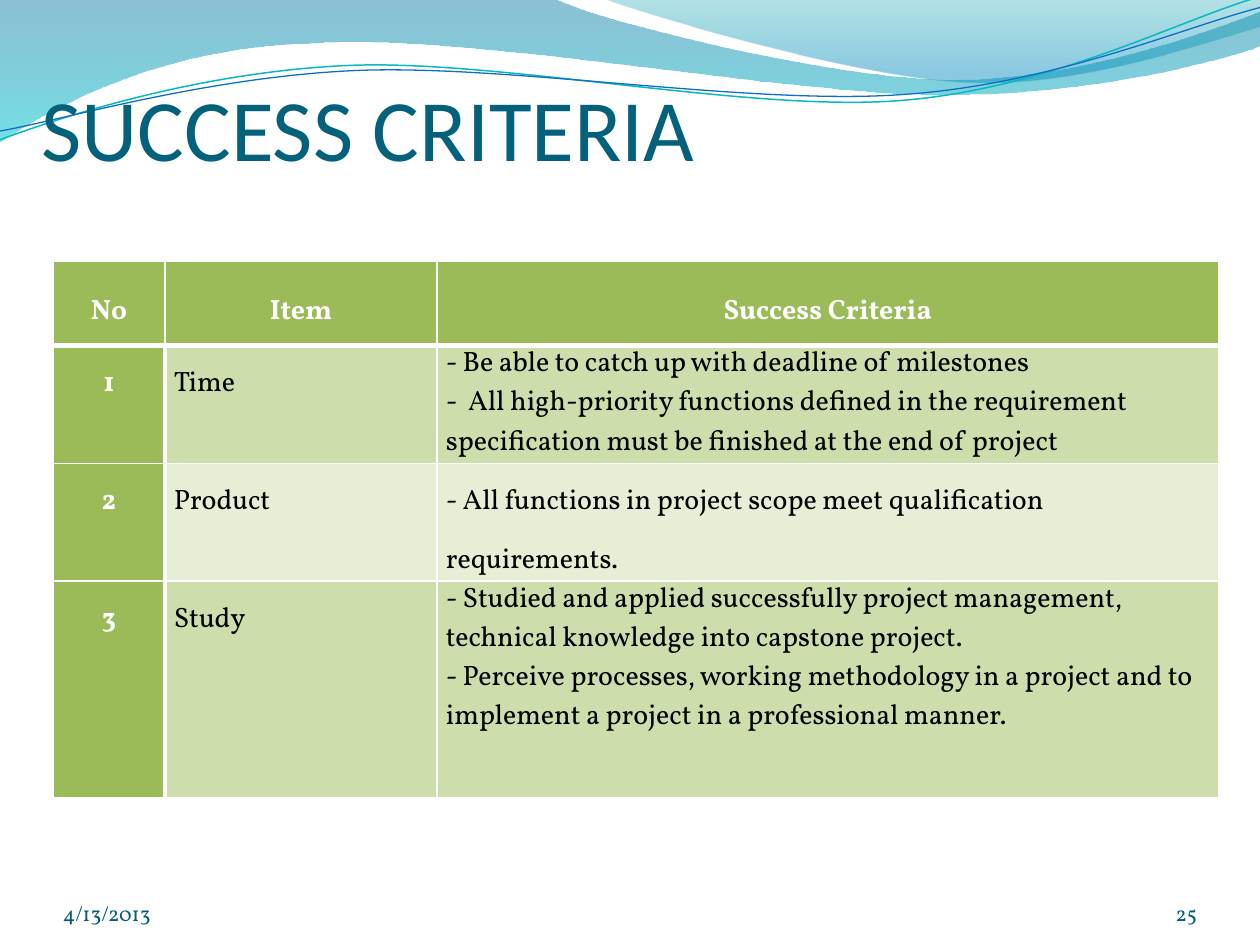
"""Build the success criteria slide: wave header, criteria table and footer."""
import pptx
import pptx.dml.color
import pptx.enum.text
import pptx.oxml
import pptx.oxml.ns
import pptx.util

PX = 9144
WHITE, BLACK, GREEN = "FFFFFF", "000000", "9BBB59"
BAND_FILLS = ("CDDDAC", "E6EED5")
ALIGN = pptx.enum.text.PP_ALIGN
ANCHOR = pptx.enum.text.MSO_ANCHOR

TITLE = "SUCCESS CRITERIA"
DATE, PAGE_NUMBER = "4/13/2013", "25"
HEADINGS = ("No", "Item", "Success Criteria")
CRITERIA = [
    ("Time", 1, [
        "- Be able to catch up with deadline of milestones",
        "-  All high-priority functions defined in the requirement specification "
        "must be finished at the end of project"]),
    ("Product", 1.5, [
        "- All functions in project scope meet qualification requirements."]),
    ("Study", 1, [
        "- Studied and applied successfully project management, "
        "technical knowledge into capstone project.",
        "- Perceive processes, working methodology in a project "
        "and to implement a project in a professional manner."]),
]
COLUMN_WIDTHS = (89, 216, 620)
ROW_HEIGHTS = (67, 94, 93, 172)

WAVE_FILLS = [
    ([(0, 0), (440, -1), (476, 17, 664, 63, 758, 63), (853, 63, 958, 26, 1000, 9),
      (1001, 36), (983, 44, 870, 76, 746, 75), (622, 75, 382, 28, 257, 34),
      (129, 36, 46, 83, -1, 113)],
     [(0, "0074A1", 45), (1, "00C6CF", 55)]),
    ([(479, -1), (509, 11, 682, 62, 769, 65), (856, 69, 961, 32, 1000, 21), (1000, 0)],
     [(0, "00A1A9", 30), (0.8, "008BBF", 45)]),
]
WAVE_LINES = [
    ([(0, 111), (48, 93, 158, 57, 277, 52), (395, 47, 593, 89, 713, 80),
      (833, 71, 938, 15, 998, -2)], "0AB8BF", 0.85),
    ([(0, 104), (47, 96, 164, 61, 283, 56), (403, 51, 597, 84, 717, 75),
      (836, 67, 941, 21, 1000, 6)], "0F6FC6", 0.75),
]


def rgb(hex_color):
    return pptx.dml.color.RGBColor.from_string(hex_color)


def write(frame, paragraphs, size=16, color=BLACK, font="Vollkorn", bold=False,
          align=ALIGN.LEFT, spacing=1):
    for index, text in enumerate(paragraphs):
        paragraph = frame.add_paragraph() if index else frame.paragraphs[0]
        paragraph.alignment = align
        paragraph.line_spacing = spacing
        run = paragraph.add_run()
        run.text = text
        run.font.size = pptx.util.Pt(size)
        run.font.name = font
        run.font.bold = bold
        run.font.color.rgb = rgb(color)


def add_label(slide, box, text, top_inset=0, **text_format):
    frame = slide.shapes.add_textbox(*(v * PX for v in box)).text_frame
    frame.word_wrap = True
    frame.vertical_anchor = ANCHOR.BOTTOM
    frame.margin_left = frame.margin_right = frame.margin_bottom = 0
    frame.margin_top = top_inset * PX
    write(frame, [text], **text_format)


def add_wave(slide, steps, closed):
    points = [step[i:i + 2] for step in steps for i in range(0, len(step), 2)]
    builder = slide.shapes.build_freeform(*points[0], scale=PX)
    builder.add_line_segments(points[1:], close=closed)
    wave = builder.convert_to_shape()
    wave.shadow.inherit = False
    segments = iter(list(wave.element.spPr.iter(pptx.oxml.ns.qn("a:lnTo"))))
    for step in steps[1:]:
        start = next(segments)
        if len(step) == 6:
            curve = pptx.oxml.parse_xml(f'<a:cubicBezTo {pptx.oxml.ns.nsdecls("a")}/>')
            start.addprevious(curve)
            for segment in (start, next(segments), next(segments)):
                curve.append(segment[0])
                segment.getparent().remove(segment)
    return wave


def fill_wave(wave, stops):
    wave.line.fill.background()
    wave.fill.gradient()
    wave.fill.gradient_angle = 270
    for stop, (position, color, _) in zip(wave.fill.gradient_stops, stops):
        stop.position = position
        stop.color.rgb = rgb(color)
    colors = wave.element.spPr.iter(pptx.oxml.ns.qn("a:srgbClr"))
    for color, (_, _, opacity) in zip(colors, stops):
        color.append(pptx.oxml.parse_xml(
            f'<a:alpha {pptx.oxml.ns.nsdecls("a")} val="{opacity * 1000}"/>'))


def border_cell(cell, widths):
    properties = cell._tc.get_or_add_tcPr()
    for index, (side, width) in enumerate(zip("LRTB", widths)):
        properties.insert(index, pptx.oxml.parse_xml(
            f'<a:ln{side} {pptx.oxml.ns.nsdecls("a")} w="{width * 12700}">'
            f'<a:solidFill><a:srgbClr val="{WHITE}"/></a:solidFill></a:ln{side}>'))


def add_criteria_table(slide):
    rows = [[([heading], 1.5) for heading in HEADINGS]]
    for number, (item, spacing, criteria) in enumerate(CRITERIA, 1):
        rows.append([([str(number)], 1.5), ([item], 1.5), (criteria, spacing)])
    table = slide.shapes.add_table(
        len(rows), len(HEADINGS), 42 * PX, 207 * PX,
        sum(COLUMN_WIDTHS) * PX, sum(ROW_HEIGHTS) * PX).table
    for column, width in zip(table.columns, COLUMN_WIDTHS):
        column.width = width * PX
    for r, (row, height) in enumerate(zip(rows, ROW_HEIGHTS)):
        table.rows[r].height = height * PX
        for c, (paragraphs, spacing) in enumerate(row):
            cell = table.cell(r, c)
            heading = r == 0 or c == 0
            cell.margin_left = cell.margin_right = 7 * PX
            cell.margin_top = cell.margin_bottom = 0
            cell.vertical_anchor = ANCHOR.TOP if r else ANCHOR.MIDDLE
            cell.fill.solid()
            cell.fill.fore_color.rgb = rgb(GREEN if heading else BAND_FILLS[(r - 1) % 2])
            border_cell(cell, (3 if r and c == 1 else 1, 3 if r and c == 0 else 1,
                               3 if r == 1 else 1, 3 if r == 0 else 1))
            write(cell.text_frame, paragraphs, color=WHITE if heading else BLACK,
                  bold=heading, align=ALIGN.CENTER if heading else ALIGN.LEFT,
                  spacing=spacing)


def main():
    deck = pptx.Presentation()
    deck.slide_width, deck.slide_height = 1000 * PX, 750 * PX
    slide = deck.slides.add_slide(deck.slide_layouts[6])
    for steps, stops in WAVE_FILLS:
        fill_wave(add_wave(slide, steps, True), stops)
    for steps, color, width in WAVE_LINES:
        wave = add_wave(slide, steps, False)
        wave.fill.background()
        wave.line.color.rgb = rgb(color)
        wave.line.width = pptx.util.Pt(width)
    add_label(slide, (33, 42, 900, 100), TITLE, top_inset=5,
              size=50, font="Calibri", color="04617B")
    add_criteria_table(slide)
    add_label(slide, (50, 695, 233, 40), DATE, size=12, color="045D75")
    add_label(slide, (867, 695, 83, 40), PAGE_NUMBER, size=12, color="045D75",
              align=ALIGN.RIGHT)
    deck.save("out.pptx")


if __name__ == "__main__":
    main()
